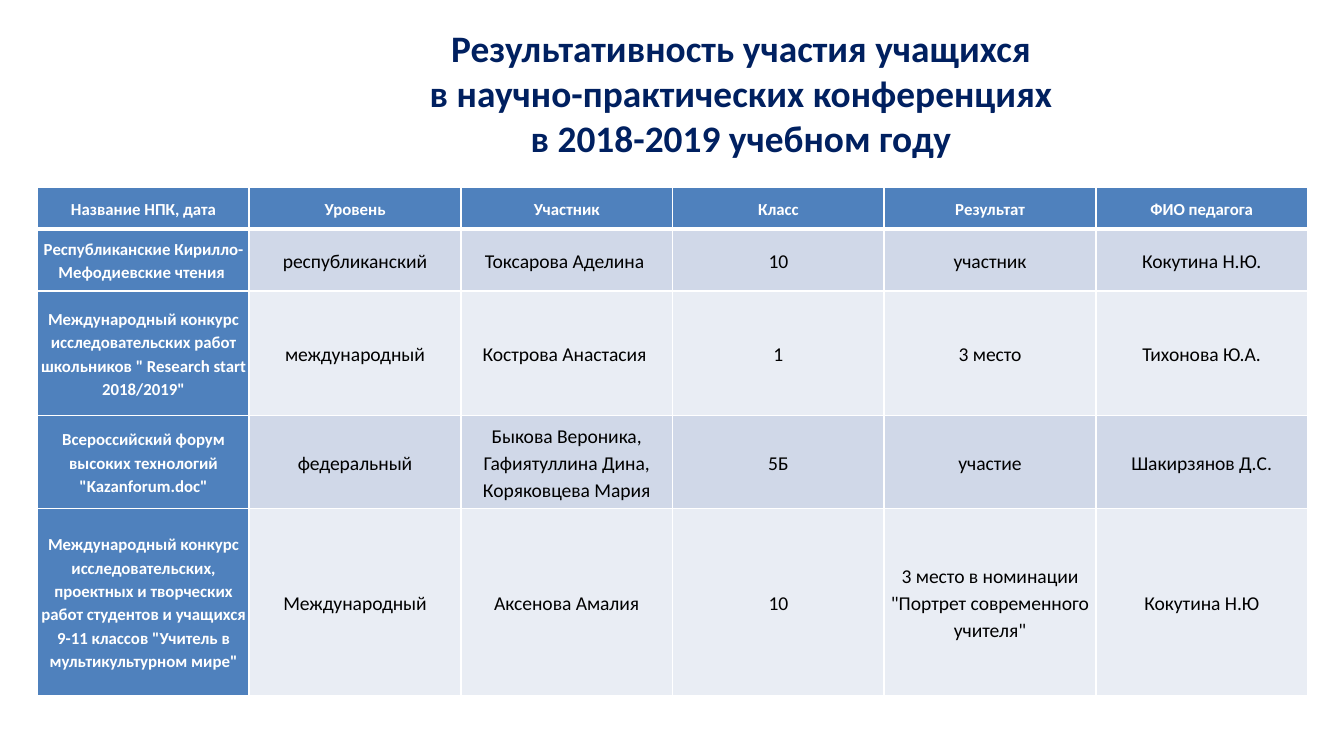
import pptx
import pptx.dml.color
import pptx.enum.text
import pptx.oxml
import pptx.oxml.ns
import pptx.util

RGBColor = pptx.dml.color.RGBColor
PP_ALIGN = pptx.enum.text.PP_ALIGN
MSO_ANCHOR = pptx.enum.text.MSO_ANCHOR

NAVY = RGBColor(0x00, 0x20, 0x60)
BLUE = RGBColor(0x4F, 0x81, 0xBD)
BAND_DARK = RGBColor(0xD0, 0xD8, 0xE8)
BAND_LIGHT = RGBColor(0xE9, 0xED, 0xF4)
WHITE = RGBColor(0xFF, 0xFF, 0xFF)
BLACK = RGBColor(0x00, 0x00, 0x00)

TITLE = """Результативность участия учащихся
в научно-практических конференциях
в 2018-2019 учебном году"""

RESULTS = [
    ["Название НПК, дата", "Уровень", "Участник", "Класс", "Результат", "ФИО педагога"],
    ["Республиканские Кирилло-Мефодиевские чтения ", "республиканский",
     "Токсарова Аделина ", "10", "участник", "Кокутина Н.Ю."],
    ['Международный конкурс исследовательских работ школьников " Research start 2018/2019"',
     "международный", "Кострова Анастасия ", "1", "3 место", "Тихонова Ю.А."],
    ['Всероссийский форум высоких технологий "Kazanforum.doc"', "федеральный",
     "Быкова Вероника, Гафиятуллина Дина, Коряковцева Мария", "5Б", "участие",
     "Шакирзянов Д.С."],
    ["Международный конкурс исследовательских, проектных и творческих работ студентов "
     'и учащихся 9-11 классов "Учитель в мультикультурном мире"',
     "Международный", "Аксенова Амалия", "10",
     '3 место в номинации "Портрет современного учителя"', "Кокутина Н.Ю"],
]
ROW_HEIGHTS = [5.5, 8.2, 16.5, 12.3, 24.7]


class Deck:
    """Style and current slide; lengths are percentages of the slide's size."""

    font = "Calibri"

    def __init__(self, width, ratio):
        self.prs = pptx.Presentation()
        self.prs.slide_width = pptx.util.Inches(width)
        self.prs.slide_height = pptx.util.Inches(width / ratio)
        self.s = self.prs.slides.add_slide(self.prs.slide_layouts[5])

    def x(self, share):
        return round(self.prs.slide_width * share / 100)

    def y(self, share):
        return round(self.prs.slide_height * share / 100)

    def format_text(self, tf, size, color, bold, spacing):
        for p in tf.paragraphs:
            p.alignment = PP_ALIGN.CENTER
            p.line_spacing = spacing
            for r in p.runs:
                r.font.name = self.font
                r.font.size = pptx.util.Pt(size)
                r.font.bold = bold
                r.font.color.rgb = color

    def title(self, text, left, top, width, height):
        sp = self.s.shapes.title
        sp.left, sp.top = self.x(left), self.y(top)
        sp.width, sp.height = self.x(width), self.y(height)
        tf = sp.text_frame
        tf.text = text
        tf.word_wrap = True
        tf.auto_size = pptx.enum.text.MSO_AUTO_SIZE.SHAPE_TO_FIT_TEXT
        tf.vertical_anchor = MSO_ANCHOR.TOP
        self.format_text(tf, 20, NAVY, True, 1.0)

    def table(self, rows, heights, left, top, width):
        """Add a table of equal columns with a header row and a header column."""
        columns = len(rows[0])
        frame = self.s.shapes.add_table(
            len(rows), columns, self.x(left), self.y(top),
            self.x(width), self.y(sum(heights)))
        table = frame.table
        for column in table.columns:
            column.width = self.x(width / columns)
        for i, (row, height) in enumerate(zip(rows, heights)):
            table.rows[i].height = self.y(height)
            for j, text in enumerate(row):
                band = BAND_DARK if i % 2 else BAND_LIGHT
                self.cell(table.cell(i, j), text, i, j, band)

    def cell(self, cell, text, i, j, band):
        header = i == 0 or j == 0
        cell.text_frame.text = text
        cell.vertical_anchor = MSO_ANCHOR.MIDDLE
        cell.margin_left = cell.margin_right = pptx.util.Inches(0.02)
        cell.margin_top = cell.margin_bottom = 0
        self.format_text(cell.text_frame, 9 if header else 10.5,
                         WHITE if header else BLACK, header, 1.15)
        self.borders(cell, top=3 if i == 1 else 1, bottom=3 if i == 0 else 1)
        cell.fill.solid()
        cell.fill.fore_color.rgb = BLUE if header else band

    def borders(self, cell, top, bottom):
        tc_pr = cell._tc.get_or_add_tcPr()
        for side, points in (("L", 1), ("R", 1), ("T", top), ("B", bottom)):
            tc_pr.append(pptx.oxml.parse_xml(
                f'<a:ln{side} {pptx.oxml.ns.nsdecls("a")} w="{pptx.util.Pt(points)}">'
                f'<a:solidFill><a:srgbClr val="{WHITE}"/></a:solidFill></a:ln{side}>'))


def main():
    deck = Deck(10, 16 / 9)
    deck.title(TITLE, 13, 2.45, 84.3, 19.75)
    deck.table(RESULTS, ROW_HEIGHTS, 2.8, 24.8, 94.5)
    deck.prs.save("out.pptx")


if __name__ == "__main__":
    main()
